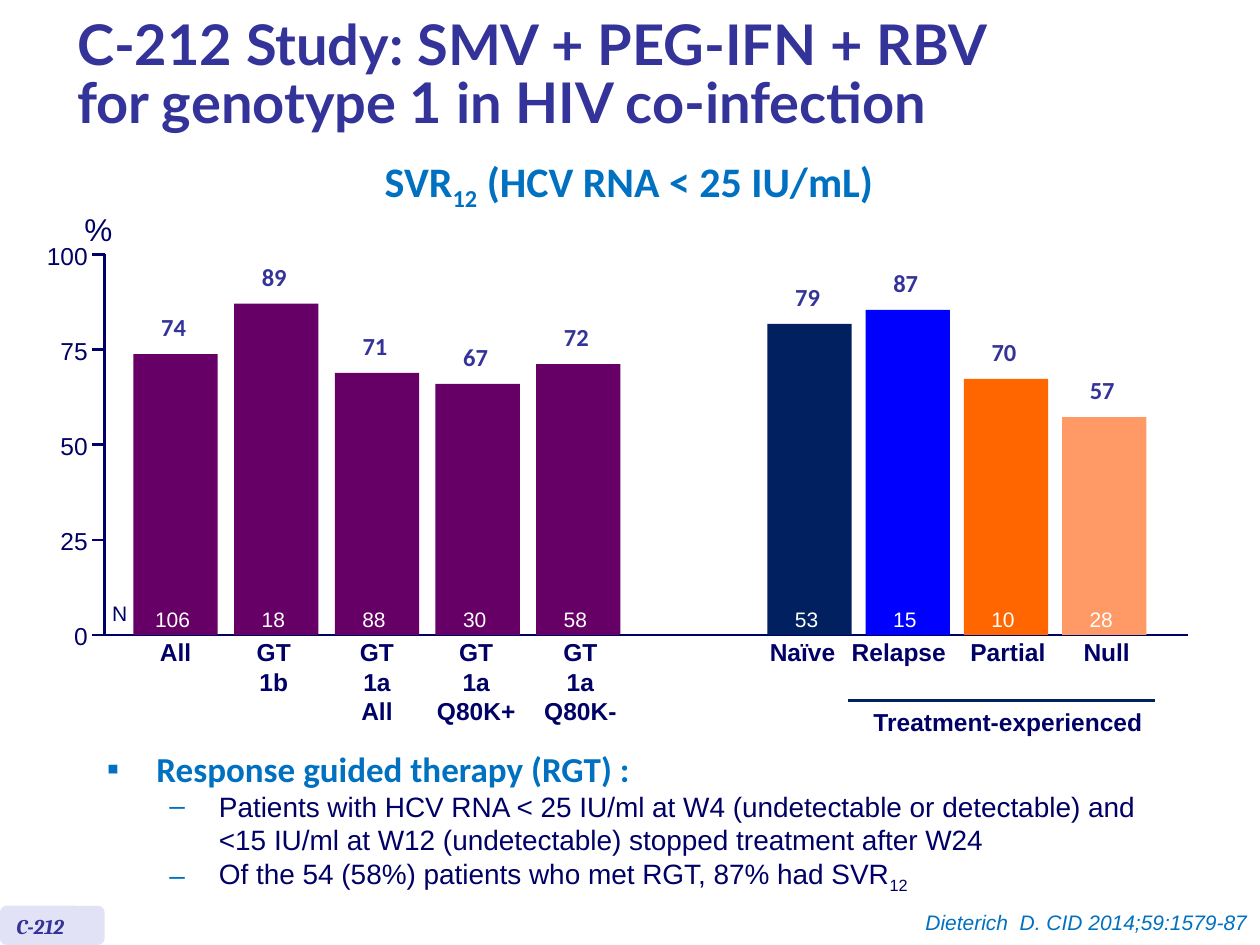
from collections import namedtuple

from lxml import etree
from pptx import Presentation
from pptx.dml.color import RGBColor
from pptx.enum.shapes import MSO_CONNECTOR, MSO_SHAPE
from pptx.enum.text import MSO_ANCHOR, MSO_AUTO_SIZE, PP_ALIGN
from pptx.oxml.ns import qn
from pptx.util import Cm, Pt

LEFT, CENTER, RIGHT = PP_ALIGN.LEFT, PP_ALIGN.CENTER, PP_ALIGN.RIGHT
TOP, MIDDLE = MSO_ANCHOR.TOP, MSO_ANCHOR.MIDDLE
NO_FIT = MSO_AUTO_SIZE.NONE
STRAIGHT = MSO_CONNECTOR.STRAIGHT
RECTANGLE, ROUNDED = MSO_SHAPE.RECTANGLE, MSO_SHAPE.ROUNDED_RECTANGLE

NAVY, INDIGO, BLUE, PLUM, DEEP = "000066", "333399", "0070C0", "660066", "002060"
TITLE = {"name": "Lato", "size": Pt(32), "bold": True, "color": INDIGO}
HEADING = {"name": "Calibri", "size": Pt(24), "bold": True, "color": BLUE}
VALUE = {"name": "Calibri", "size": Pt(14), "bold": True, "color": INDIGO}
CATEGORY = {"name": "Arial", "size": Pt(14), "bold": True, "color": NAVY}
SCALE = {"name": "Arial", "size": Pt(14), "color": NAVY}
UNIT = {"name": "Arial", "size": Pt(18), "color": NAVY}
COUNT = {"name": "Arial", "size": Pt(12), "color": "FFFFFF"}
COUNT_HEAD = {**COUNT, "color": NAVY}
TAG = {"name": "Cambria", "size": Pt(12), "bold": True, "italic": True, "color": INDIGO}
CITATION = {"name": "Arial", "size": Pt(12), "italic": True, "color": BLUE}
LEAD = {"name": "Calibri", "size": Pt(20), "bold": True, "color": BLUE}
DETAIL = {"name": "Arial", "size": Pt(16), "bold": False, "color": NAVY}

Box = namedtuple("Box", "left top width height")
Bar = namedtuple("Bar", "label value count height color shift")

GENOTYPES = [
    Bar(["All"], "74", "106", 5.66, PLUM, 0),
    Bar(["GT", "1b"], "89", "18", 6.68, PLUM, -0.05),
    Bar(["GT", "1a", "All"], "71", "88", 5.28, PLUM, 0),
    Bar(["GT", "1a", "Q80K+"], "67", "30", 5.06, PLUM, -0.03),
    Bar(["GT", "1a", "Q80K-"], "72", "58", 5.46, PLUM, 0.04),
]
HISTORIES = [
    Bar(["Naïve"], "79", "53", 6.27, DEEP, -0.14),
    Bar(["Relapse"], "87", "15", 6.55, "0000FF", -0.18),
    Bar(["Partial"], "70", "10", 5.16, "FF6600", 0.04),
    Bar(["Null"], "57", "28", 4.39, "FF9966", 0.05),
]
POINTS = [
    (0, "▪", 1.0, LEAD, "Response guided therapy (RGT) :"),
    (1, "–", 2.26, DETAIL,
     "Patients with HCV RNA < 25 IU/ml at W4 (undetectable or detectable) "
     "and <15 IU/ml at W12 (undetectable) stopped treatment after W24"),
    (1, "–", 2.26, DETAIL, "Of the 54 (58%) patients who met RGT, 87% had SVR|12"),
]


def paint(color):
    return RGBColor.from_string(color)


def lengths(box):
    return [Cm(length) for length in box]


def add_spans(para, text, style):
    for index, part in enumerate(text.split("|")):
        span = para.add_run()
        span.text = part
        for name, value in style.items():
            if name == "color":
                span.font.color.rgb = paint(value)
            else:
                setattr(span.font, name, value)
        if index % 2:
            span.font._element.set("baseline", "-25000")


def set_frame(frame, **values):
    for name, value in values.items():
        setattr(frame, name, value)


def add_text(page, box, lines, style, align=CENTER, anchor=TOP, wrap=False, inset=None):
    frame = page.shapes.add_textbox(*lengths(box)).text_frame
    set_frame(frame, word_wrap=wrap, vertical_anchor=anchor)
    if inset is not None:
        margins = ("margin_left", "margin_top", "margin_right", "margin_bottom")
        set_frame(frame, **dict.fromkeys(margins, Cm(inset)))
    for index, line in enumerate(lines):
        para = frame.add_paragraph() if index else frame.paragraphs[0]
        para.alignment = align
        add_spans(para, line, style)
    return frame


def add_line(page, x1, y1, x2, y2, color):
    line = page.shapes.add_connector(STRAIGHT, *lengths((x1, y1, x2, y2)))
    line.line.color.rgb = paint(color)
    line.line.width = Pt(1.5)
    etree.SubElement(line._element.spPr, qn("a:effectLst"))


def add_block(page, kind, box, color):
    block = page.shapes.add_shape(kind, *lengths(box))
    block.shadow.inherit = False
    block.fill.solid()
    block.fill.fore_color.rgb = paint(color)
    block.line.fill.background()


def move(shape, box):
    shape.left, shape.top, shape.width, shape.height = lengths(box)


def add_title(page, box):
    title = page.shapes.title
    move(title, box)
    set_frame(title.text_frame, vertical_anchor=MIDDLE, auto_size=NO_FIT, word_wrap=True)
    para = title.text_frame.paragraphs[0]
    para.alignment = LEFT
    para.line_spacing = 0.85
    add_spans(para, "C-212 Study: SMV + PEG-IFN + RBV ", TITLE)
    para.add_line_break()
    etree.SubElement(para._p.find(qn("a:br")), qn("a:rPr"), sz="3200")
    add_spans(para, "for genotype 1 in HIV co-infection", TITLE)


def add_heading(page, box):
    frame = add_text(page, box, ["SVR|12| (HCV RNA < 25 IU/mL)"], HEADING)
    frame.paragraphs[0].line_spacing = Pt(23.6)


def add_axes(page, box):
    base = box.top + box.height
    for level in range(0, 101, 25):
        y = base - box.height * level / 100
        add_text(page, Box(box.left - 1.18, y - 0.28, 0.84, 0.61), [str(level)], SCALE,
                 align=RIGHT, anchor=MIDDLE, inset=0)
        end = box.left if level else box.left + box.width
        add_line(page, box.left - 0.25, y, end, y, NAVY)
    add_line(page, box.left, box.top, box.left, base, NAVY)
    add_text(page, Box(box.left - 0.66, box.top - 1.02, 1.07, 1.02), ["%"], UNIT)
    add_text(page, Box(box.left - 0.1, base - 0.81, 0.81, 0.76), ["N"], COUNT_HEAD)


def add_bars(page, box, bars, pitch, width=1.7, label_width=2.6):
    base = box.top + box.height
    for index, bar in enumerate(bars):
        left = box.left + index * pitch
        top = base - bar.height
        add_block(page, RECTANGLE, Box(left, top, width, bar.height), bar.color)
        add_text(page, Box(left + 0.3, top - 1.09, 1.02, 1.12), [bar.value], VALUE, inset=0.25)
        add_text(page, Box(left + 0.18, base - 0.69, 1.22, 0.76), [bar.count], COUNT)
        label_left = left + bar.shift - (label_width - width) / 2
        height = 0.26 + 0.6 * len(bar.label)
        add_text(page, Box(label_left, base - 0.08, label_width, height), bar.label, CATEGORY)


def add_response_chart(page, box):
    base = box.top + box.height
    add_axes(page, box)
    add_bars(page, box._replace(left=box.left + 0.58), GENOTYPES, 2.03)
    add_bars(page, box._replace(left=box.left + 13.36), HISTORIES, 1.98)
    add_line(page, box.left + 14.98, base + 1.32, box.left + 21.18, base + 1.32, DEEP)
    add_text(page, Box(box.left + 15.24, base + 1.32, 5.94, 0.86),
             ["Treatment-experienced"], CATEGORY)


def add_bullet(para, mark, indent):
    properties = para._p.get_or_add_pPr()
    properties.set("marL", str(Cm(indent)))
    properties.set("indent", str(Cm(-1)))
    color = etree.SubElement(properties, qn("a:buClr"))
    etree.SubElement(color, qn("a:srgbClr"), val=BLUE)
    etree.SubElement(properties, qn("a:buFont"), typeface="Arial")
    etree.SubElement(properties, qn("a:buChar"), char=mark)


def add_points(page, box):
    body = page.placeholders[1]
    move(body, box)
    frame = body.text_frame
    set_frame(frame, auto_size=NO_FIT, word_wrap=True, vertical_anchor=TOP)
    for index, (level, mark, indent, style, text) in enumerate(POINTS):
        para = frame.add_paragraph() if index else frame.paragraphs[0]
        add_bullet(para, mark, indent)
        para.level = level
        para.space_before = Pt(0)
        add_spans(para, text, style)


def add_footer(page, box):
    add_block(page, ROUNDED, Box(box.left, box.top, 2.11, box.height), "E2E2F6")
    add_text(page, Box(box.left + 0.08, box.top + 0.03, 2.01, 0.76), ["C-212"], TAG,
             align=LEFT, wrap=True)
    add_text(page, Box(box.left + box.width - 8.1, box.top - 0.05, 8.1, 0.76),
             ["Dieterich  D. CID 2014;59:1579-87"], CITATION, align=RIGHT, wrap=True)


def main():
    deck = Presentation()
    deck.slide_width, deck.slide_height = Cm(25.4), Cm(19.05)
    page = deck.slides.add_slide(deck.slide_layouts[1])
    add_title(page, Box(1.3, 0.2, 23.19, 2.72))
    add_heading(page, Box(7.42, 3.33, 10.52, 1.12))
    add_response_chart(page, Box(2.11, 5.13, 21.84, 7.67))
    add_points(page, Box(1.9, 14.94, 22.17, 3.18))
    add_footer(page, Box(0, 18.26, 25.4, 0.79))
    deck.save("out.pptx")


if __name__ == "__main__":
    main()
